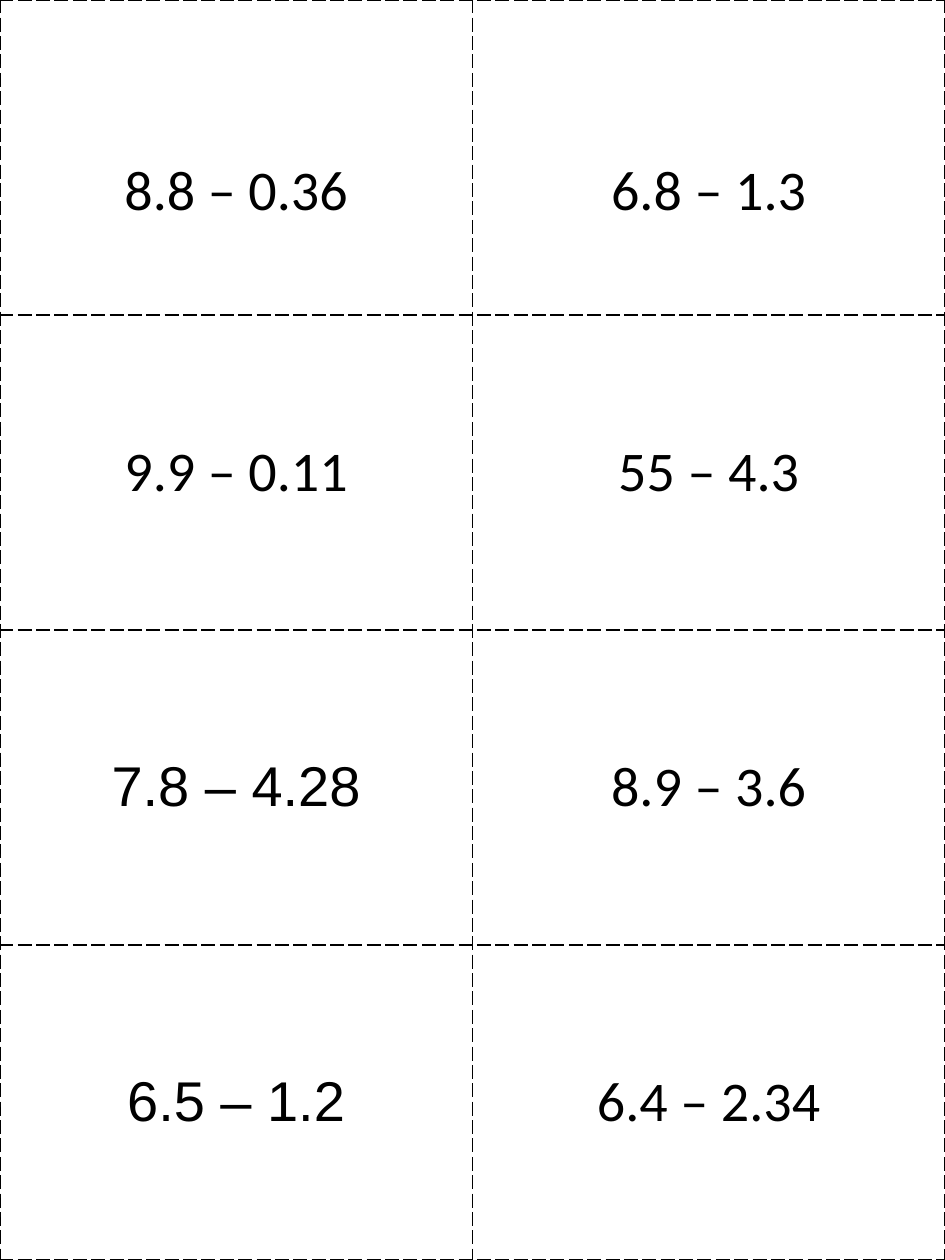
from lxml import etree
from pptx import Presentation
from pptx.dml.color import RGBColor
from pptx.enum.text import MSO_ANCHOR, PP_ALIGN
from pptx.oxml.ns import qn
from pptx.util import Inches, Pt

MIDDLE = MSO_ANCHOR.MIDDLE
CENTER = PP_ALIGN.CENTER

COLORS = {"card": "FFFFFF", "ink": "000000"}
BORDER_WIDTH = Pt(1)
BORDER_SIDES = ("a:lnL", "a:lnR", "a:lnT", "a:lnB")

# Each card: problem and font
CARDS = [
    [("8.8 – 0.36", "Calibri"), ("6.8 – 1.3", "Calibri")],
    [("9.9 – 0.11", "Calibri"), ("55 – 4.3", "Calibri")],
    [("7.8 – 4.28", "Arial"), ("8.9 – 3.6", "Calibri")],
    [("6.5 – 1.2", "Arial"), ("6.4 – 2.34", "Calibri")],
]
# The top row of problems sits lower in its cards
TOP_ROW_MARGIN = Inches(0.59)


def add_dashed_borders(cell):
    """Draw a dashed cutting line on all four sides of a cell."""
    properties = cell._tc.get_or_add_tcPr()
    for index, side in enumerate(BORDER_SIDES):
        line = etree.Element(qn(side), w=str(BORDER_WIDTH))
        fill = etree.SubElement(line, qn("a:solidFill"))
        etree.SubElement(fill, qn("a:srgbClr"), val=COLORS["ink"])
        etree.SubElement(line, qn("a:prstDash"), val="lgDash")
        properties.insert(index, line)


def fill_card(cell, problem, font_name):
    """Write one subtraction problem in the middle of a card."""
    cell.fill.solid()
    cell.fill.fore_color.rgb = RGBColor.from_string(COLORS["card"])
    cell.vertical_anchor = MIDDLE
    add_dashed_borders(cell)

    cell.text = problem
    paragraph = cell.text_frame.paragraphs[0]
    paragraph.alignment = CENTER
    paragraph.font.name = font_name
    paragraph.font.size = Pt(32)
    paragraph.font.bold = False
    paragraph.font.color.rgb = RGBColor.from_string(COLORS["ink"])


def add_card_sheet(slide, left, top, width, height):
    """Split the given box into a grid of equal cards."""
    row_count, column_count = len(CARDS), len(CARDS[0])
    table = slide.shapes.add_table(
        row_count, column_count, left, top, width, height
    ).table
    table.first_row = False
    table.horz_banding = False
    for column in table.columns:
        column.width = width // column_count
    for row in table.rows:
        row.height = height // row_count

    for row_index, row_cards in enumerate(CARDS):
        for column_index, (problem, font_name) in enumerate(row_cards):
            cell = table.cell(row_index, column_index)
            fill_card(cell, problem, font_name)
            if row_index == 0:
                cell.margin_top = TOP_ROW_MARGIN


def main():
    presentation = Presentation()
    presentation.slide_width = Inches(7.5)
    presentation.slide_height = Inches(10)
    slide = presentation.slides.add_slide(presentation.slide_layouts[6])
    add_card_sheet(slide, Inches(0), Inches(0), Inches(7.5), Inches(10))
    presentation.save("out.pptx")


if __name__ == "__main__":
    main()
